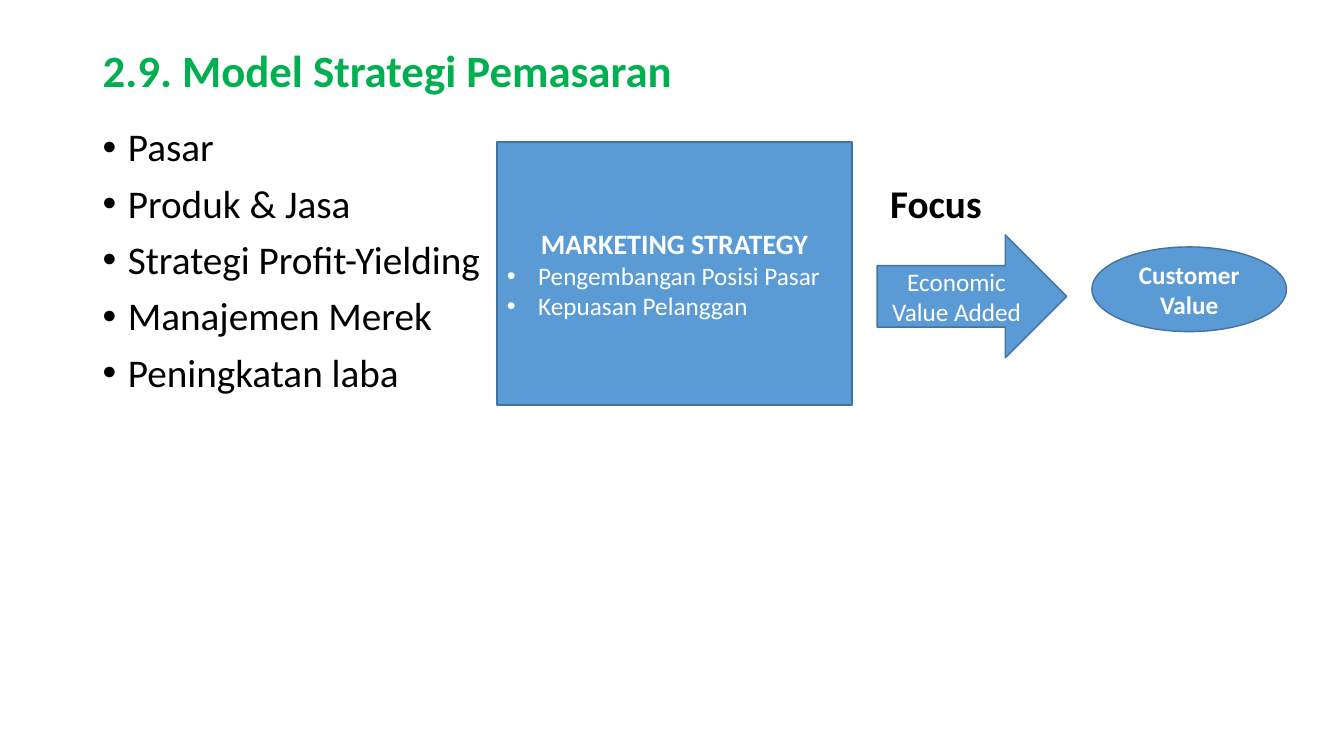
"""Builds the marketing strategy model slide."""
from dataclasses import dataclass

from lxml import etree
from pptx import Presentation
from pptx.dml.color import RGBColor
from pptx.enum.shapes import MSO_SHAPE
from pptx.enum.text import MSO_ANCHOR, PP_ALIGN
from pptx.oxml.ns import qn
from pptx.util import Inches, Pt

RECTANGLE, ARROW, OVAL = MSO_SHAPE.RECTANGLE, MSO_SHAPE.RIGHT_ARROW, MSO_SHAPE.OVAL
TOP, MIDDLE = MSO_ANCHOR.TOP, MSO_ANCHOR.MIDDLE
LEFT, CENTER = PP_ALIGN.LEFT, PP_ALIGN.CENTER


@dataclass(frozen=True)
class Theme:
    font: str = "Calibri"
    green: str = "00B050"
    black: str = "000000"
    white: str = "FFFFFF"
    blue: str = "5B9BD5"
    edge: str = "43739E"
    title: int = 32
    body: int = 28
    heading: int = 20
    label: int = 18
    body_indent: float = 0.25
    label_indent: float = 0.31
    line_spacing: float = 0.9
    space_before: int = 10


THEME = Theme()
WIDTH, HEIGHT = 13.33, 7.5
MARGIN, BODY_TOP = 0.92, 1.22
FOCUS_LEFT, FOCUS_ROW = 8.73, 1
ROW_PITCH = (THEME.body * 1.22 * THEME.line_spacing + THEME.space_before) / 72

TITLE = "2.9. Model Strategi Pemasaran"
TOPICS = ["Pasar", "Produk & Jasa", "Strategi Profit-Yielding", "Manajemen Merek", "Peningkatan laba"]
FOCUS = "Focus"
STRATEGY = "MARKETING STRATEGY"
STRATEGY_POINTS = ["Pengembangan Posisi Pasar", "Kepuasan Pelanggan"]
FLOW = [
    (RECTANGLE, (4.93, 1.41, 3.52, 2.61), STRATEGY, THEME.heading, True, STRATEGY_POINTS),
    (ARROW, (8.7, 2.33, 1.88, 1.22), "Economic Value Added", THEME.label, False, []),
    (OVAL, (10.83, 2.45, 1.93, 0.84), "Customer Value", THEME.label, True, []),
]


def add_bullet(para, indent):
    properties = para._p.get_or_add_pPr()
    properties.set("marL", str(Inches(indent)))
    properties.set("indent", str(-Inches(indent)))
    etree.SubElement(properties, qn("a:buFont")).set("typeface", "Arial")
    etree.SubElement(properties, qn("a:buChar")).set("char", "•")


def style(para, size, color, bold=False, align=LEFT):
    para.alignment = align
    for span in para.runs:
        span.font.name = THEME.font
        span.font.size = Pt(size)
        span.font.bold = bold
        span.font.color.rgb = RGBColor.from_string(color)


def add_text(page, area, lines, size, color, bold=False, anchor=TOP, bullets=False):
    box = page.shapes.add_textbox(*map(Inches, area))
    frame = box.text_frame
    frame.word_wrap = True
    frame.vertical_anchor = anchor
    frame.text = "\n".join(lines)
    for row, para in enumerate(frame.paragraphs):
        style(para, size, color, bold)
        para.line_spacing = THEME.line_spacing
        para.space_before = Pt(THEME.space_before if row else 0)
        if bullets:
            add_bullet(para, THEME.body_indent)


def add_stage(page, kind, area, label, size, bold, points):
    shape = page.shapes.add_shape(kind, *map(Inches, area))
    shape.shadow.inherit = False
    shape.fill.solid()
    shape.fill.fore_color.rgb = RGBColor.from_string(THEME.blue)
    shape.line.color.rgb = RGBColor.from_string(THEME.edge)
    shape.line.width = Pt(1)
    frame = shape.text_frame
    frame.word_wrap = True
    frame.vertical_anchor = MIDDLE
    frame.text = "\n".join([label, *points])
    heading, *items = frame.paragraphs
    style(heading, size, THEME.white, bold, CENTER)
    for para in items:
        style(para, THEME.label, THEME.white)
        add_bullet(para, THEME.label_indent)


def main():
    deck = Presentation()
    deck.slide_width, deck.slide_height = Inches(WIDTH), Inches(HEIGHT)
    page = deck.slides.add_slide(deck.slide_layouts[6])
    add_text(page, (MARGIN, 0.4, 11.5, 0.64), [TITLE], THEME.title, THEME.green, True, MIDDLE)
    add_text(page, (MARGIN, BODY_TOP, 11.95, 5.54), TOPICS, THEME.body, THEME.black, bullets=True)
    focus_top = BODY_TOP + FOCUS_ROW * ROW_PITCH
    add_text(page, (FOCUS_LEFT, focus_top, 1.5, 0.53), [FOCUS], THEME.body, THEME.black, True)
    for stage in FLOW:
        add_stage(page, *stage)
    deck.save("out.pptx")


if __name__ == "__main__":
    main()
